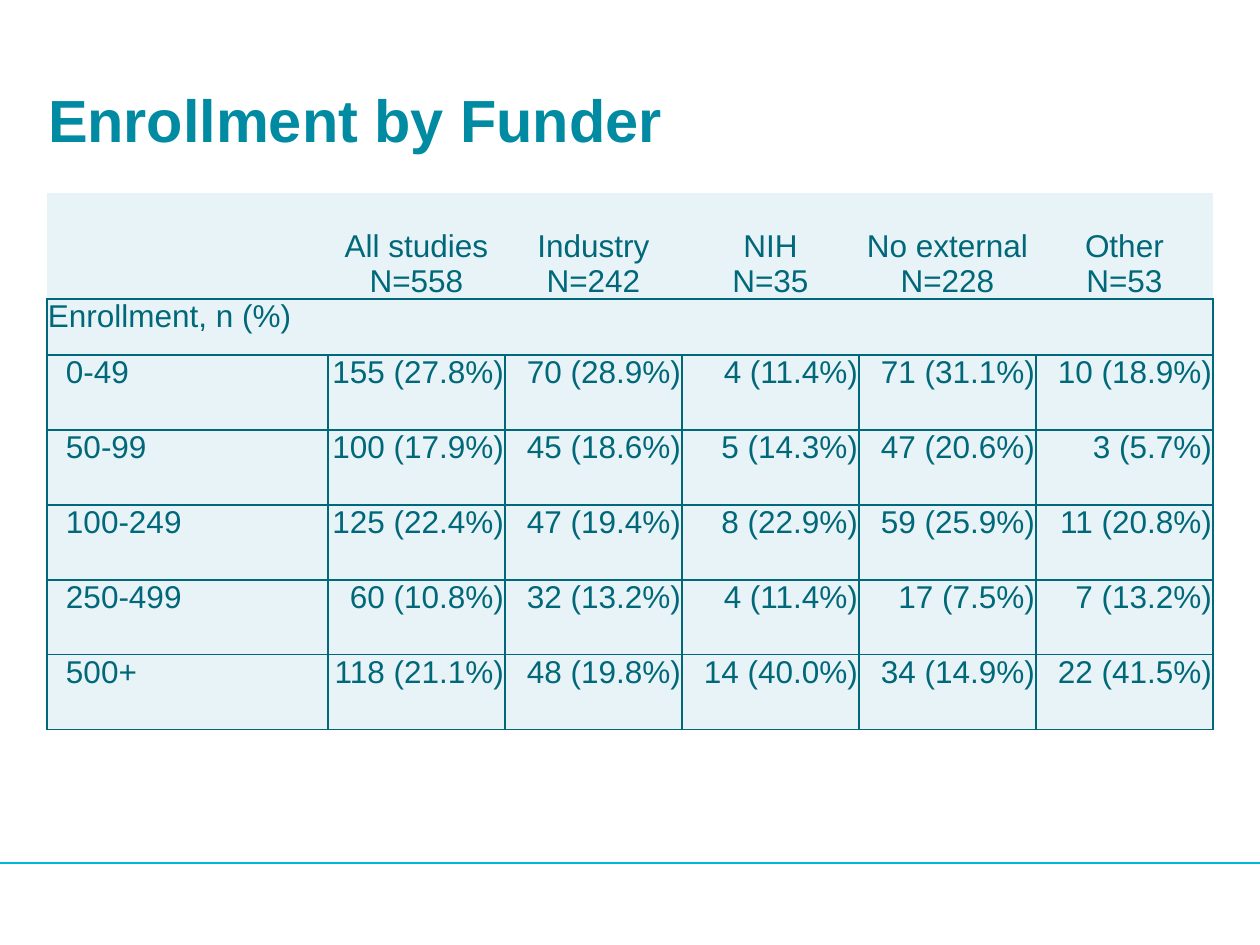
from pptx import Presentation
from pptx.dml.color import RGBColor
from pptx.enum.shapes import MSO_CONNECTOR, MSO_SHAPE
from pptx.enum.text import MSO_ANCHOR, PP_ALIGN
from pptx.oxml.ns import qn
from pptx.util import Pt
from lxml import etree

RECTANGLE = MSO_SHAPE.RECTANGLE
STRAIGHT = MSO_CONNECTOR.STRAIGHT
TOP, MIDDLE, BOTTOM = MSO_ANCHOR.TOP, MSO_ANCHOR.MIDDLE, MSO_ANCHOR.BOTTOM
LEFT, CENTER, RIGHT = PP_ALIGN.LEFT, PP_ALIGN.CENTER, PP_ALIGN.RIGHT

PX_PER_INCH = 126
SLIDE_W, SLIDE_H = 1260, 945
FONT = "Arial"
COLORS = {
    "title": "008BA2",
    "ink": "006879",
    "cell": "E7F3F7",
    "rule": "00B7D5",
    "footer": "FFFFFF",
}

FUNDERS = [
    ("All studies", "N=558"),
    ("Industry", "N=242"),
    ("NIH", "N=35"),
    ("No external", "N=228"),
    ("Other", "N=53"),
]
SECTION = "Enrollment, n (%)"
ENROLLMENT = [
    ("0-49", "155 (27.8%)", "70 (28.9%)", "4 (11.4%)", "71 (31.1%)", "10 (18.9%)"),
    ("50-99", "100 (17.9%)", "45 (18.6%)", "5 (14.3%)", "47 (20.6%)", "3 (5.7%)"),
    ("100-249", "125 (22.4%)", "47 (19.4%)", "8 (22.9%)", "59 (25.9%)", "11 (20.8%)"),
    ("250-499", "60 (10.8%)", "32 (13.2%)", "4 (11.4%)", "17 (7.5%)", "7 (13.2%)"),
    ("500+", "118 (21.1%)", "48 (19.8%)", "14 (40.0%)", "34 (14.9%)", "22 (41.5%)"),
]
LABEL_W = 281
HEADER_H, SECTION_H = 106, 56
LABEL_INDENT = 18


def px(length):
    return round(length * 914400 / PX_PER_INCH)


def rgb(name):
    return RGBColor.from_string(COLORS[name])


def add_run(paragraph, text, size, color, bold=False):
    run = paragraph.add_run()
    run.text = text
    run.font.name = FONT
    run.font.size = Pt(size)
    run.font.bold = bold
    run.font.color.rgb = rgb(color)


def add_footer(slide, x, y, w, h):
    band = slide.shapes.add_shape(RECTANGLE, px(x), px(y), px(w), px(h))
    band.shadow.inherit = False
    band.fill.solid()
    band.fill.fore_color.rgb = rgb("footer")
    band.line.fill.background()

    rule_y = px(y + 2)
    rule = slide.shapes.add_connector(STRAIGHT, px(x), rule_y, px(x + w), rule_y)
    rule.line.color.rgb = rgb("rule")
    rule.line.width = Pt(0.75)
    properties = rule._element.find(qn("p:spPr"))
    etree.SubElement(properties, qn("a:effectLst"))


def add_title(slide, x, y, w, h):
    title = slide.shapes.add_textbox(px(x), px(y), px(w), px(h))
    frame = title.text_frame
    frame.word_wrap = True
    frame.vertical_anchor = MIDDLE
    frame.margin_left = frame.margin_right = 0
    frame.margin_top = frame.margin_bottom = 0
    add_run(frame.paragraphs[0], "Enrollment by Funder", 34, "title", bold=True)


def style_cell(cell, sides):
    """Fill the cell and draw borders on the given sides, a subset of "LRTB"."""
    properties = cell._tc.get_or_add_tcPr()
    for side in "LRTB":
        border = etree.SubElement(properties, qn(f"a:ln{side}"), w=str(Pt(1)))
        if side in sides:
            fill = etree.SubElement(border, qn("a:solidFill"))
            etree.SubElement(fill, qn("a:srgbClr"), val=COLORS["ink"])
        else:
            etree.SubElement(border, qn("a:noFill"))
    cell.fill.solid()
    cell.fill.fore_color.rgb = rgb("cell")
    cell.margin_left = cell.margin_right = px(1)
    cell.margin_top = cell.margin_bottom = 0


def write_cell(cell, lines, align, anchor=TOP, indent=0):
    cell.vertical_anchor = anchor
    paragraph = cell.text_frame.paragraphs[0]
    paragraph.alignment = align
    paragraph.space_after = Pt(1)
    if indent:
        properties = paragraph._p.get_or_add_pPr()
        properties.set("marL", str(px(indent)))
        properties.set("indent", "0")
    for number, line in enumerate(lines):
        if number:
            paragraph.add_line_break()
        add_run(paragraph, line, 18, "ink")


def add_enrollment_table(slide, x, y, w, h):
    row_count, column_count = len(ENROLLMENT) + 2, len(FUNDERS) + 1
    frame = slide.shapes.add_table(row_count, column_count, px(x), px(y), px(w), px(h))
    table = frame.table
    table.first_row = table.horz_banding = False

    funder_w = (w - LABEL_W) / len(FUNDERS)
    for column, width in zip(table.columns, [LABEL_W] + [funder_w] * len(FUNDERS)):
        column.width = px(width)
    band_h = (h - HEADER_H - SECTION_H) / len(ENROLLMENT)
    heights = [HEADER_H, SECTION_H] + [band_h] * len(ENROLLMENT)
    for row, height in zip(table.rows, heights):
        row.height = px(height)

    for r in range(row_count):
        for c in range(column_count):
            style_cell(table.cell(r, c), "LRTB" if r else "B")

    for c, funder in enumerate(FUNDERS, start=1):
        write_cell(table.cell(0, c), funder, CENTER, BOTTOM)

    section = table.cell(1, 0)
    section.merge(table.cell(1, column_count - 1))
    write_cell(section, [SECTION], LEFT)

    for r, (size_band, *counts) in enumerate(ENROLLMENT, start=2):
        write_cell(table.cell(r, 0), [size_band], LEFT, indent=LABEL_INDENT)
        for c, count in enumerate(counts, start=1):
            write_cell(table.cell(r, c), [count], RIGHT)


def main():
    presentation = Presentation()
    presentation.slide_width = px(SLIDE_W)
    presentation.slide_height = px(SLIDE_H)
    slide = presentation.slides.add_slide(presentation.slide_layouts[6])
    add_footer(slide, 0, 861, SLIDE_W, 84)
    add_title(slide, 48, 66, 1166, 106)
    add_enrollment_table(slide, 47, 193, 1166, 537)
    presentation.save("out.pptx")


if __name__ == "__main__":
    main()
